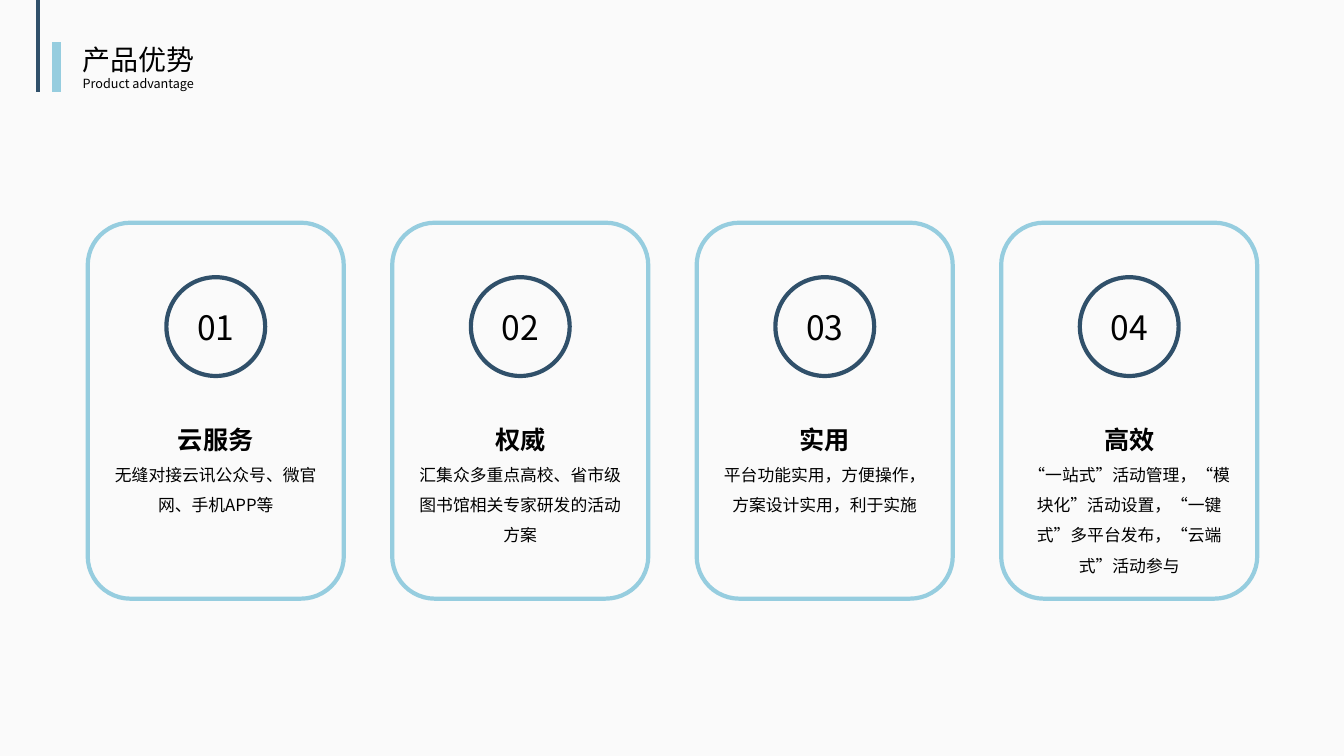
import pptx
import pptx.util
import pptx.dml.color
import pptx.enum.lang
import pptx.enum.shapes
import pptx.enum.text
import pptx.oxml.ns
import lxml.etree

COLORS = {"paper": "FAFAFA", "navy": "30506A", "sky": "96CDDF", "ink": "000000"}
ALIGN = pptx.enum.text.PP_ALIGN
ANCHOR = pptx.enum.text.MSO_ANCHOR
SHAPE = pptx.enum.shapes.MSO_SHAPE
Inches = pptx.util.Inches

CARDS = [
    ("云服务", "无缝对接云讯公众号、微官网、手机APP等"),
    ("权威", "汇集众多重点高校、省市级图书馆相关专家研发的活动方案"),
    ("实用", "平台功能实用，方便操作，方案设计实用，利于实施"),
    ("高效", "“一站式”活动管理，“模块化”活动设置，“一键式”多平台发布，“云端式”活动参与"),
]


class AdvantagePage:
    """Draw the elements of the current slide in one shared style."""

    font_name = "Noto Sans CJK SC"

    def __init__(self, deck):
        self.page = deck.slides.add_slide(deck.slide_layouts[5])
        fill = self.page.background.fill
        fill.solid()
        fill.fore_color.rgb = self.color("paper")

    def color(self, name):
        return pptx.dml.color.RGBColor.from_string(COLORS[name])

    def set_text(self, box, lines, align, anchor, spacing=1.0):
        frame = box.text_frame
        frame.word_wrap = True
        frame.auto_size = pptx.enum.text.MSO_AUTO_SIZE.NONE
        frame.vertical_anchor = anchor
        frame.text = "\n".join(text for text, size, bold in lines)
        for para, (text, size, bold) in zip(frame.paragraphs, lines):
            para.alignment = align
            para.line_spacing = spacing
            for span in para.runs:
                span.font.name = self.font_name
                span.font.size = pptx.util.Pt(size)
                span.font.bold = bold
                span.font.color.rgb = self.color("ink")
                span.font.language_id = pptx.enum.lang.MSO_LANGUAGE_ID.SIMPLIFIED_CHINESE
                east = lxml.etree.SubElement(span.font._element, pptx.oxml.ns.qn("a:ea"))
                east.set("typeface", self.font_name)

    def title(self, lines, left, top, width, height):
        box = self.page.shapes.title
        box.left, box.top = Inches(left), Inches(top)
        box.width, box.height = Inches(width), Inches(height)
        self.set_text(box, lines, ALIGN.JUSTIFY, ANCHOR.TOP)

    def bar(self, x, top, bottom, color, weight):
        line = self.page.shapes.add_connector(
            pptx.enum.shapes.MSO_CONNECTOR.STRAIGHT,
            Inches(x), Inches(top), Inches(x), Inches(bottom))
        line.line.color.rgb = self.color(color)
        line.line.width = pptx.util.Pt(weight)
        lxml.etree.SubElement(line._element.spPr, pptx.oxml.ns.qn("a:effectLst"))

    def outline(self, group, kind, left, top, width, height, color):
        box = group.shapes.add_shape(
            kind, Inches(left), Inches(top), Inches(width), Inches(height))
        box.shadow.inherit = False
        box.fill.background()
        box.line.color.rgb = self.color(color)
        box.line.width = pptx.util.Pt(3)
        return box

    def card(self, number, heading, detail, left):
        group = self.page.shapes.add_group_shape()
        self.outline(group, SHAPE.ROUNDED_RECTANGLE, left, 2.21, 2.54, 3.73, "sky")
        badge = self.outline(group, SHAPE.OVAL, left + 0.78, 2.75, 0.98, 0.98, "navy")
        self.set_text(badge, [(f"{number:02d}", 24, False)], ALIGN.CENTER, ANCHOR.MIDDLE)
        box = group.shapes.add_textbox(
            Inches(left + 0.16), Inches(4.01), Inches(2.22), Inches(1.46))
        self.set_text(box, [(heading, 18, True), (detail, 12, False)],
                      ALIGN.CENTER, ANCHOR.TOP, 1.5)


def main():
    deck = pptx.Presentation()
    deck.slide_width, deck.slide_height = Inches(13.33), Inches(7.5)
    page = AdvantagePage(deck)
    page.bar(0.38, 0, 0.91, "navy", 3)
    page.bar(0.56, 0.42, 0.91, "sky", 7)
    page.title([("产品优势", 20, False), ("Product advantage", 9, False)],
               0.72, 0.37, 1.51, 0.59)
    for index, (heading, detail) in enumerate(CARDS):
        page.card(index + 1, heading, detail, 0.87 + index * 3.02)
    deck.save("out.pptx")


if __name__ == "__main__":
    main()
